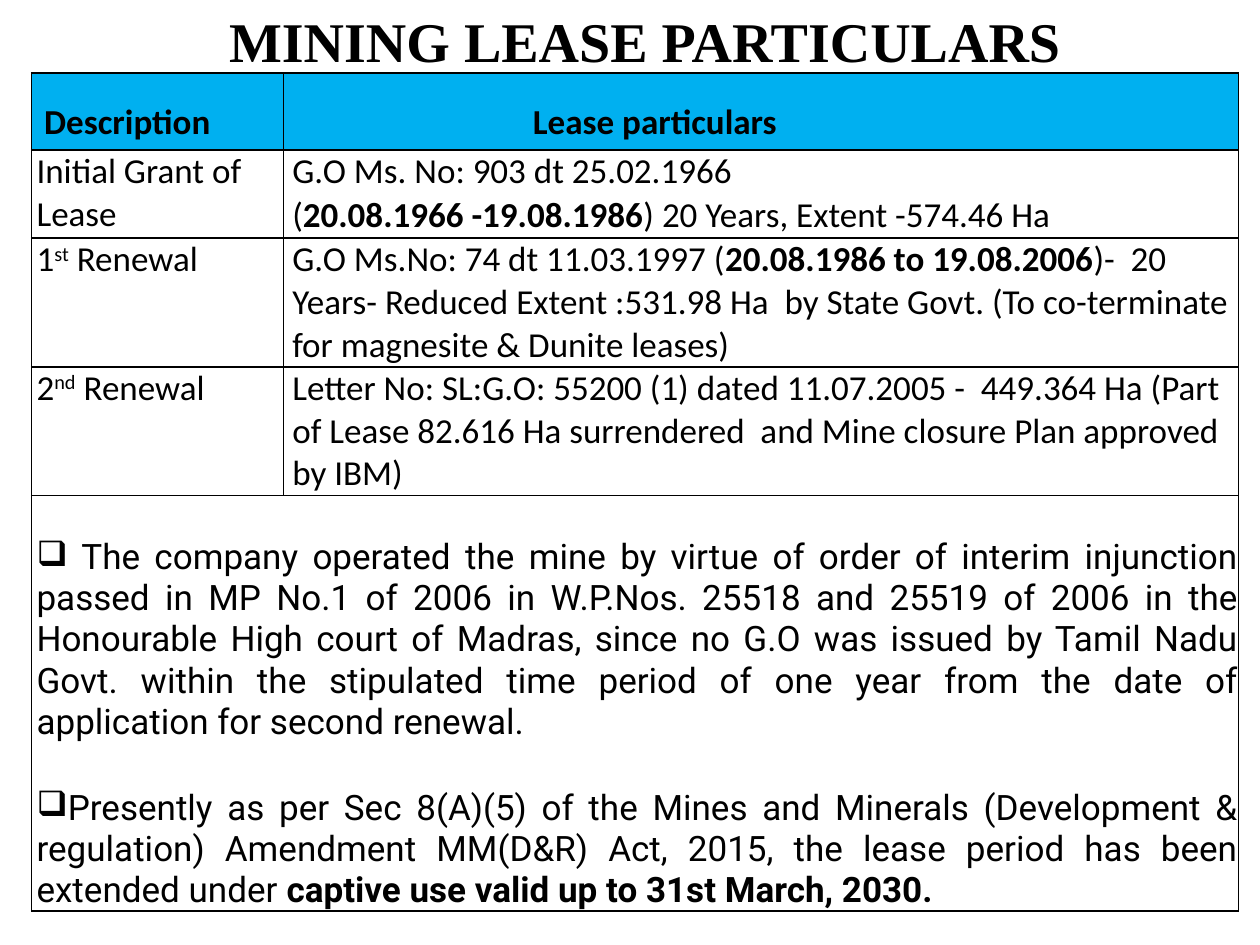
from lxml.etree import SubElement
from pptx import Presentation
from pptx.dml.color import RGBColor
from pptx.enum.text import MSO_ANCHOR, PP_ALIGN
from pptx.oxml import parse_xml
from pptx.oxml.ns import nsdecls, qn
from pptx.util import Inches, Pt

BLACK = RGBColor(0x00, 0x00, 0x00)
HEADER_BLUE = RGBColor(0x00, 0xB0, 0xF0)

TITLE = "MINING LEASE PARTICULARS"
HEADERS = [("Description", 0), ("Lease particulars", 1.88)]  # text, indent

# Each cell is a list of paragraphs, each paragraph a list of (text, style) runs.
LEASES = [
    ([[("Initial Grant of Lease", "")]],
     [[("G.O Ms. No: 903 dt 25.02.1966", "")],
      [("(", ""), ("20.08.1966 -19.08.1986", "bold"),
       (") 20 Years, Extent -574.46 Ha", "")]]),
    ([[("1", ""), ("st", "super"), (" Renewal", "")]],
     [[("G.O Ms.No: 74 dt 11.03.1997 (", ""),
       ("20.08.1986 to 19.08.2006", "bold"),
       (")-  20 Years- Reduced Extent :531.98 Ha  by State Govt. "
        "(To co-terminate for magnesite & Dunite leases)", "")]]),
    ([[("2", ""), ("nd", "super"), (" Renewal", "")]],
     [[("Letter No: SL:G.O: 55200 (1) dated 11.07.2005 -  449.364 Ha "
        "(Part of Lease 82.616 Ha surrendered  and Mine closure Plan "
        "approved by IBM)", "")]]),
]
NOTES = [
    [(" The company operated the mine by virtue of order of interim injunction "
      "passed in MP No.1 of 2006 in W.P.Nos. 25518 and 25519 of 2006 in the "
      "Honourable High court of Madras, since no G.O was issued by Tamil Nadu "
      "Govt. within the stipulated time period of one year from the date of "
      "application for second renewal.", "")],
    [("Presently as per Sec 8(A)(5) of the Mines and Minerals (Development & "
      "regulation) Amendment MM(D&R) Act, 2015, the lease period has been "
      "extended under ", ""),
     ("captive use valid up to 31st March, 2030.", "bold")],
]

COL_WIDTHS = [2, 7.58]
ROW_HEIGHTS = [0.57, 0.7, 0.7, 0.74, 3.2]
TABLE_HEIGHT = 6.67
INDENTS = [0.04, 0.07]
NOTE_GAP = 0.33


def format_run(r, font, size, bold):
    r.font.name, r.font.size, r.font.bold = font, Pt(size), bold
    r.font.color.rgb = BLACK


def set_indent(p, inches):
    pPr = p._p.get_or_add_pPr()
    pPr.set("marL", str(Inches(inches)))
    pPr.set("indent", "0")
    return pPr


def fill_cell(cell, paragraphs, indent, font="Calibri"):
    cell.margin_left = cell.margin_right = cell.margin_top = cell.margin_bottom = 0
    tf = cell.text_frame
    for i, runs in enumerate(paragraphs):
        p = tf.add_paragraph() if i else tf.paragraphs[0]
        p.space_before = Pt(0.9)
        set_indent(p, indent)
        for text, style in runs:
            r = p.add_run()
            r.text = text
            format_run(r, font, 20, style == "bold")
            if style == "super":
                r.font._element.set("baseline", "30000")


def add_borders(cell):
    tcPr = cell._tc.get_or_add_tcPr()
    for i, side in enumerate(("lnL", "lnR", "lnT", "lnB")):
        tcPr.insert(i, parse_xml(
            f'<a:{side} {nsdecls("a")} w="{Pt(1)}"><a:solidFill>'
            f'<a:srgbClr val="{BLACK}"/></a:solidFill></a:{side}>'))


prs = Presentation()
prs.slide_width, prs.slide_height = Inches(10), Inches(7.5)
s = prs.slides.add_slide(prs.slide_layouts[5])

title = s.shapes.title
title.left, title.top = Inches(1.58), Inches(0)
title.width, title.height = Inches(7.08), Inches(0.64)
tf = title.text_frame
tf.text = TITLE
tf.vertical_anchor = MSO_ANCHOR.TOP
tf.paragraphs[0].alignment = PP_ALIGN.CENTER
format_run(tf.paragraphs[0].runs[0], "Times New Roman", 32, True)

frame = s.shapes.add_table(len(ROW_HEIGHTS), len(COL_WIDTHS), Inches(0.25), Inches(0.58),
                           Inches(sum(COL_WIDTHS)), Inches(TABLE_HEIGHT))
table = frame.table
table.first_row = table.horz_banding = False
for col, width in zip(table.columns, COL_WIDTHS):
    col.width = Inches(width)
for row, height in zip(table.rows, ROW_HEIGHTS):
    row.height = Inches(height)
frame.height = Inches(TABLE_HEIGHT)

for cell in table.iter_cells():
    cell.fill.background()
    add_borders(cell)

for c, (text, indent) in enumerate(HEADERS):
    cell = table.cell(0, c)
    cell.fill.solid()
    cell.fill.fore_color.rgb = HEADER_BLUE
    cell.text_frame.text = text
    p = cell.text_frame.paragraphs[0]
    p.line_spacing = 1.5
    set_indent(p, indent)
    format_run(p.runs[0], "Calibri", 20, True)

for r, lease in enumerate(LEASES, start=1):
    for c, paragraphs in enumerate(lease):
        fill_cell(table.cell(r, c), paragraphs, INDENTS[c])

last = len(ROW_HEIGHTS) - 1
notes = table.cell(last, 0)
notes.merge(table.cell(last, 1))
fill_cell(notes, NOTES, INDENTS[0], "Roboto")
notes.margin_top = Inches(NOTE_GAP)
for i, p in enumerate(notes.text_frame.paragraphs):
    p.alignment = PP_ALIGN.JUSTIFY
    if i:
        p.space_before = Pt(25.5)
    SubElement(p._p.get_or_add_pPr(), qn("a:buChar")).set("char", "❑")

prs.save("out.pptx")
